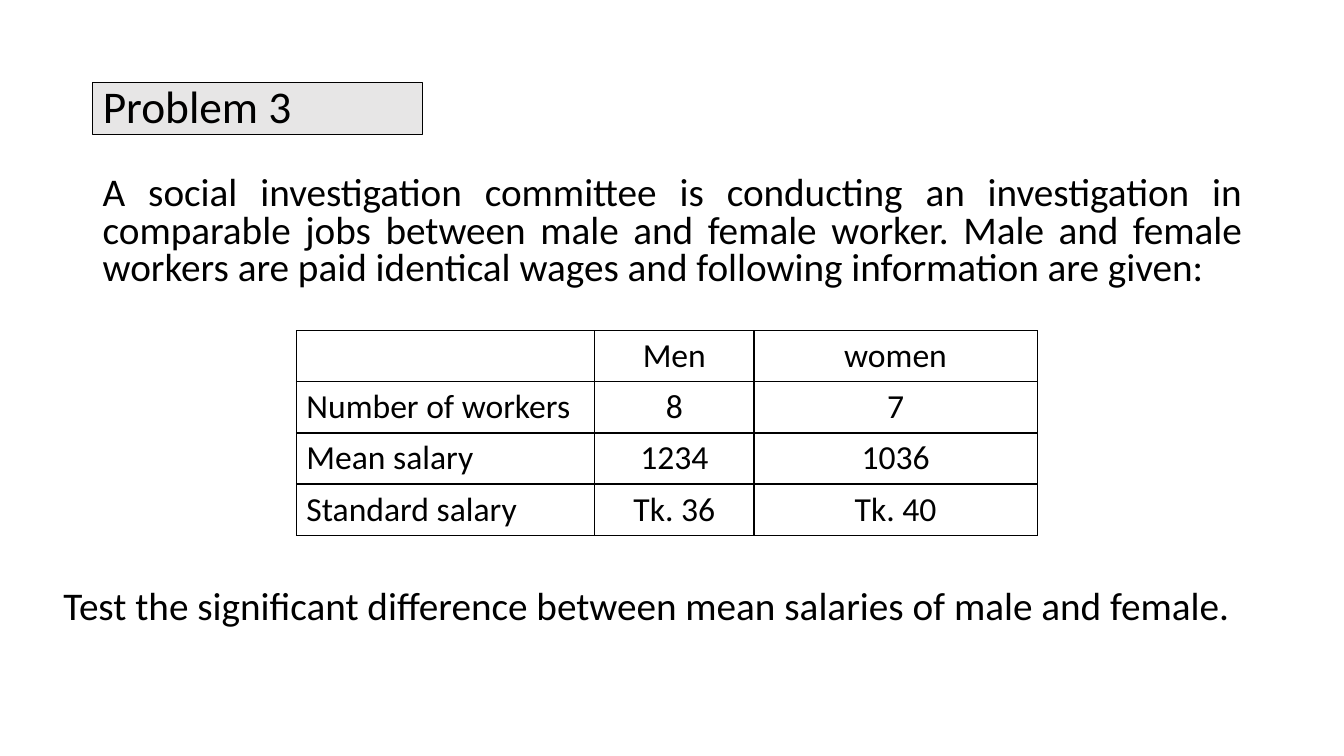
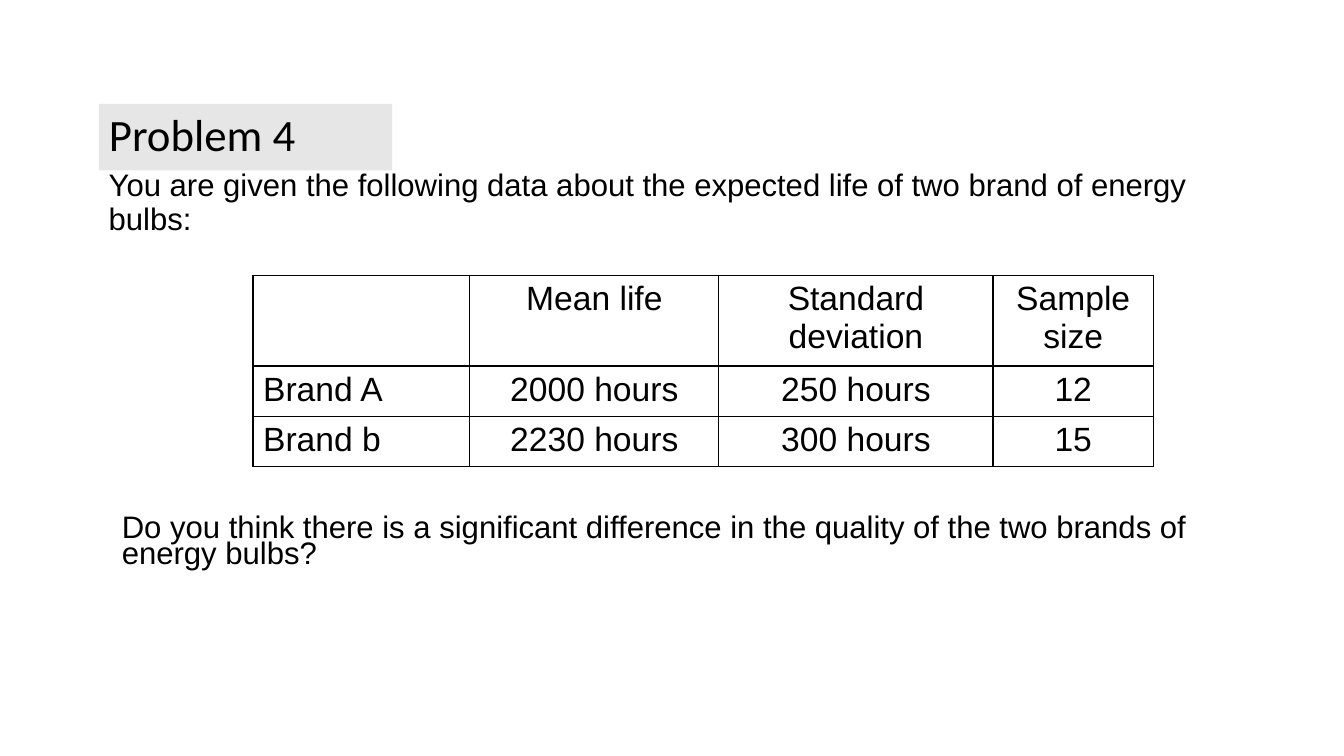
from pptx import Presentation
from pptx.dml.color import RGBColor as Rgb
from pptx.enum.text import MSO_ANCHOR as Anchor, MSO_AUTO_SIZE as Fit, PP_ALIGN as Align
from pptx.oxml import parse_xml
from pptx.oxml.ns import nsdecls
from pptx.util import Inches, Pt

HUES = {"ink": "000000", "band": "E7E6E6", "page": "FFFFFF"}
ink, band, page = (Rgb.from_string(HUES[key]) for key in ("ink", "band", "page"))

deck = Presentation()
deck.slide_width, deck.slide_height = Inches(13.33), Inches(7.5)
col, row = deck.slide_width / 100, deck.slide_height / 100

# Boxes are (left, top, width, height) in hundredths of the slide.
slides = [
    {
        "title": "Problem 3", "size": 32.4, "box": (6.9, 10.93, 24.53, 6.93),
        "edge": True, "font": "Calibri",
        "texts": [
            ("A social investigation committee is conducting an investigation in "
             "comparable jobs between male and female worker. Male and female workers "
             "are paid identical wages and following information are given:",
             (6.9, 22.67, 86.25, 17.07), 28, 0.8, Align.JUSTIFY, Anchor.TOP),
            ("Test the significant difference between mean salaries of male and female.",
             (3.98, 76.27, 89.18, 7.6), 28, 1.0, Align.LEFT, Anchor.TOP),
        ],
        "spot": (22.05, 43.73), "cols": (22.2, 11.85, 21.07), "rows": (6.77,) * 4,
        "cells": [
            ("", "Men", "women"),
            ("Number of workers", "8", "7"),
            ("Mean salary", "1234", "1036"),
            ("Standard salary", "Tk. 36", "Tk. 40"),
        ],
    },
    {
        "title": "Problem 4", "size": 32, "box": (7.35, 13.73, 21.83, 8.8),
        "edge": False, "font": "Arial",
        "texts": [
            ("You are given the following data about the expected life of two brand "
             "of energy bulbs:",
             (7.35, 22.53, 87.98, 8.8), 22.2, 0.9, Align.LEFT, Anchor.MIDDLE),
            ("Do you think there is a significant difference in the quality of the "
             "two brands of energy bulbs?",
             (8.33, 67.47, 87.98, 8.8), 22.2, 0.7, Align.LEFT, Anchor.MIDDLE),
        ],
        "spot": (18.83, 36.4), "cols": (16.13, 18.53, 20.4, 11.93),
        "rows": (11.2, 6.27, 6.27),
        "cells": [
            ("", "Mean life", "Standard deviation", "Sample size"),
            ("Brand A", "2000 hours", "250 hours", "12"),
            ("Brand b", "2230 hours", "300 hours", "15"),
        ],
    },
]


def grid(x, y, w, h):
    """Turn hundredths of the slide into lengths."""
    return int(x * col), int(y * row), int(w * col), int(h * row)


def write(frame, text, font, size, align, space=1.0):
    frame.text = text
    para = frame.paragraphs[0]
    para.alignment, para.line_spacing = align, space
    para.font.size = Pt(size)
    for run in para.runs:
        run.font.name, run.font.size = font, Pt(size)
        run.font.color.rgb = ink


for data in slides:
    slide = deck.slides.add_slide(deck.slide_layouts[5])

    title = slide.shapes.title
    title.left, title.top, title.width, title.height = grid(*data["box"])
    title.fill.solid()
    title.fill.fore_color.rgb = band
    if data["edge"]:
        title.line.color.rgb = ink
        title.line.width = Pt(0.75)
    frame = title.text_frame
    frame.auto_size, frame.vertical_anchor = Fit.NONE, Anchor.MIDDLE
    write(frame, data["title"], "Calibri", data["size"], Align.LEFT, 0.9)

    for text, box, size, space, align, anchor in data["texts"]:
        frame = slide.shapes.add_textbox(*grid(*box)).text_frame
        frame.word_wrap, frame.vertical_anchor = True, anchor
        write(frame, text, data["font"], size, align, space)

    cols, rows = data["cols"], data["rows"]
    area = grid(*data["spot"], sum(cols), sum(rows))
    table = slide.shapes.add_table(len(rows), len(cols), *area).table
    table.first_row = table.horz_banding = False
    for item, width in zip(table.columns, cols):
        item.width = int(width * col)
    for item, height in zip(table.rows, rows):
        item.height = int(height * row)
    for r, line in enumerate(data["cells"]):
        for c, text in enumerate(line):
            cell = table.cell(r, c)
            write(cell.text_frame, text, data["font"], 24,
                  Align.CENTER if c else Align.LEFT)
            cell.fill.solid()
            cell.fill.fore_color.rgb = page
            props = cell._tc.get_or_add_tcPr()
            for n, side in enumerate(("lnL", "lnR", "lnT", "lnB")):
                props.insert(n, parse_xml(
                    f'<a:{side} {nsdecls("a")} w="{Pt(1)}"><a:solidFill>'
                    f'<a:srgbClr val="{HUES["ink"]}"/></a:solidFill></a:{side}>'))

deck.save("out.pptx")
